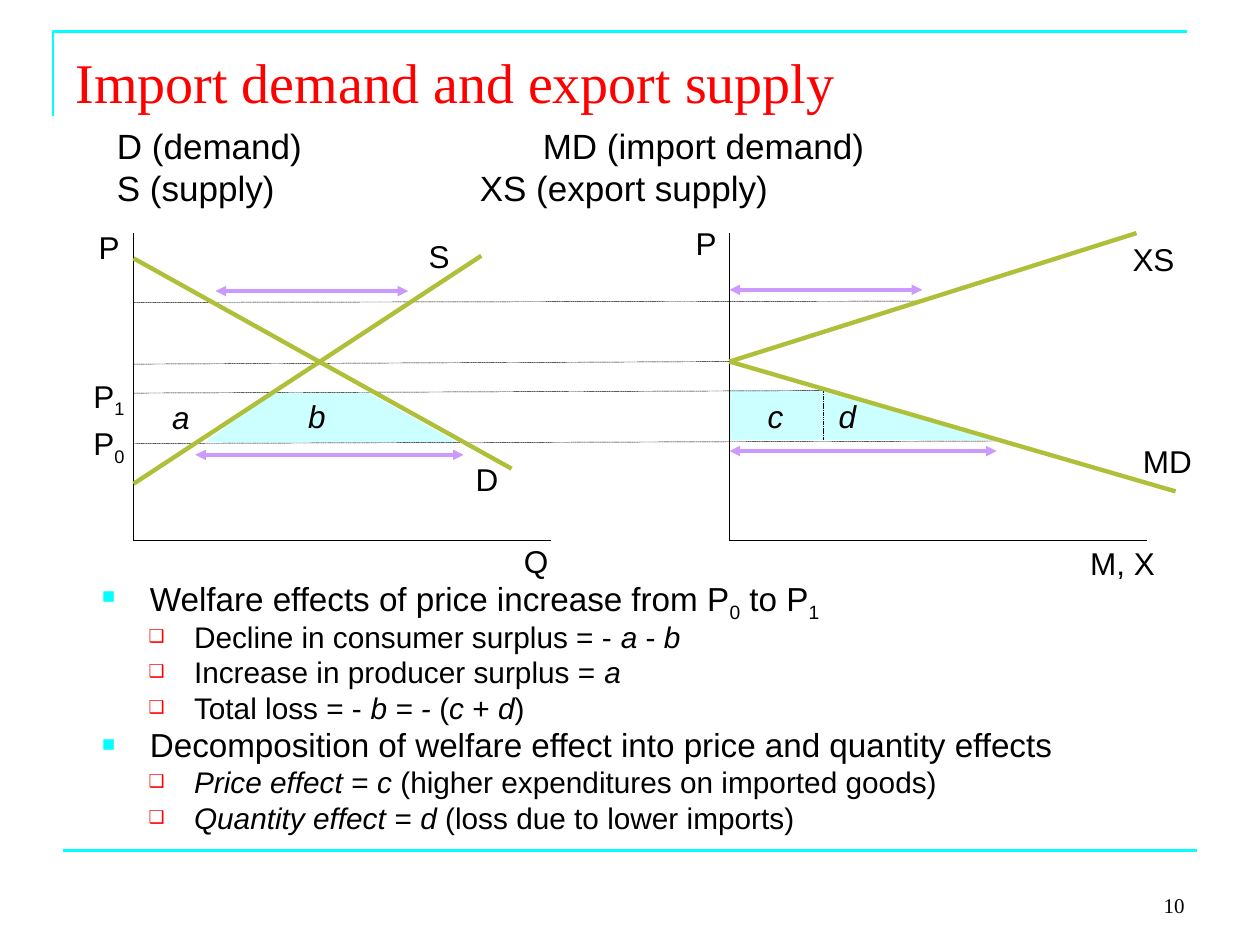
from lxml.etree import SubElement
from pptx import Presentation
from pptx.dml.color import RGBColor
from pptx.enum.dml import MSO_LINE
from pptx.enum.shapes import MSO_CONNECTOR
from pptx.enum.text import MSO_ANCHOR, MSO_AUTO_SIZE, PP_ALIGN
from pptx.oxml.ns import qn
from pptx.util import Inches, Pt

COLORS = {
    "frame": "00FFFF",
    "title": "FF0000",
    "text": "000000",
    "curve": "AFBF39",
    "trade": "CC99FF",
    "welfare": "CCFFFF",
}
COLUMNS, ROWS = 100, 75
LEFT_AXIS, RIGHT_AXIS = 10.6, 57.9
AXIS_TOP, AXIS_BOTTOM, AXIS_LENGTH = 18.5, 42.9, 33.1

# Bullet sign, colour, size in percent, text size, left margin, hanging indent
LEVELS = [
    ("■", "frame", 65, 19, 3.8, 3.8),
    ("❑", "title", 60, 17, 7.3, 3.6),
]
# Asterisks enclose italics; an underscore lowers the next character.
WELFARE_POINTS = [
    (0, "Welfare effects of price increase from P_0 to P_1"),
    (1, "Decline in consumer surplus = - *a* - *b*"),
    (1, "Increase in producer surplus = *a*"),
    (1, "Total loss = - *b = - *(*c* + *d*)"),
    (0, "Decomposition of welfare effect into price and quantity effects"),
    (1, "*Price effect *= *c *(higher expenditures on imported goods)"),
    (1, "*Quantity effect *= *d *(loss due to lower imports)"),
]
WELFARE_AREAS = [
    [(57.9, 31), (57.9, 34.9), (79.1, 34.9), (65, 31)],
    [(21.5, 31.2), (16.3, 35.1), (36.3, 35.1), (29.3, 31.2)],
]
CURVES = [
    ((LEFT_AXIS, 20.5), (40.6, 37.2)),
    ((LEFT_AXIS, 38.4), (38.2, 20.3)),
    ((RIGHT_AXIS, 28.7), (93.3, 39)),
    ((RIGHT_AXIS, 28.7), (90.2, 18.5)),
]
PRICE_LINES = [
    ((LEFT_AXIS, 24), (72.8, 23.9)),
    ((LEFT_AXIS, 28.9), (RIGHT_AXIS, 28.7)),
    ((LEFT_AXIS, 31.2), (65.7, 31)),
    ((LEFT_AXIS, 35.2), (79.1, 35)),
    ((65.3, 34.9), (65.3, 31)),
]
# Start column, end column, row
TRADE_ARROWS = [
    (15.5, 36.8, 36.1),
    (RIGHT_AXIS, 79.1, 35.8),
    (17.1, 32.4, 23.1),
    (RIGHT_AXIS, 73.2, 23),
]
# Text, left, top, width
LABELS = [
    ("MD", 89.1, 34.6, 7.1),
    ("XS", 88, 18.6, 7.1),
    ("S", 32.1, 18.3, 5.5),
    ("D", 35.9, 36, 5.5),
    ("Q", 39.8, 42.5, 5.5),
    ("P", 5.9, 17.6, 5.5),
    ("P", 53.3, 17.3, 5.5),
    ("M, X", 84.8, 42.7, 8.6),
    ("P_0", 5.9, 33.2, 5.5),
    ("P_1", 5.9, 29.4, 5.5),
    ("*a*", 11.6, 31.1, 5.5),
    ("*b*", 22.4, 31, 5.5),
    ("*c*", 58.8, 31, 5.5),
    ("*d*", 64.5, 31, 5.5),
]


class SlideBuilder:
    """Holds the slide, its grid and its text style."""

    def __init__(self, deck):
        self.slide = deck.slides.add_slide(deck.slide_layouts[1])
        self.column = deck.slide_width / COLUMNS
        self.row = deck.slide_height / ROWS

    def x(self, columns):
        return round(columns * self.column)

    def y(self, rows):
        return round(rows * self.row)

    def place(self, holder, left, top, width, height):
        holder.left, holder.top = self.x(left), self.y(top)
        holder.width, holder.height = self.x(width), self.y(height)

    def style(self, paragraph, size, color="text", font="Arial"):
        paragraph.font.size = Pt(size)
        paragraph.font.name = font
        paragraph.font.color.rgb = RGBColor.from_string(COLORS[color])

    def add_runs(self, paragraph, text):
        """Adds runs, reading *italic* and _subscript marks."""
        for index, stretch in enumerate(text.split("*")):
            plain, *lowered = stretch.split("_")
            pieces = [(plain, False)]
            for piece in lowered:
                pieces += [(piece[0], True), (piece[1:], False)]
            for words, subscript in pieces:
                if not words:
                    continue
                run = paragraph.add_run()
                run.text = words
                if index % 2:
                    run.font.italic = True
                if subscript:
                    run._r.get_or_add_rPr().set("baseline", "-25000")

    def title(self, text, *area):
        heading = self.slide.shapes.title
        self.place(heading, *area)
        heading.text_frame.vertical_anchor = MSO_ANCHOR.MIDDLE
        paragraph = heading.text_frame.paragraphs[0]
        paragraph.alignment = PP_ALIGN.LEFT
        self.add_runs(paragraph, text)
        self.style(paragraph, 32, "title", "Times New Roman")

    def indent(self, paragraph, margin, hanging):
        properties = paragraph._p.get_or_add_pPr()
        properties.set("marL", str(self.x(margin)))
        properties.set("indent", str(-self.x(hanging)))
        return properties

    def bullets(self, points, *area):
        body = self.slide.placeholders[1]
        self.place(body, *area)
        frame = body.text_frame
        frame.auto_size = MSO_AUTO_SIZE.NONE
        frame.vertical_anchor = MSO_ANCHOR.TOP
        for index, (level, text) in enumerate(points):
            paragraph = frame.add_paragraph() if index else frame.paragraphs[0]
            sign, color, percent, size, margin, hanging = LEVELS[level]
            paragraph.level = level
            paragraph.line_spacing = 0.8
            paragraph.space_before = Pt(4)
            properties = self.indent(paragraph, margin, hanging)
            bullet_color = SubElement(properties, qn("a:buClr"))
            SubElement(bullet_color, qn("a:srgbClr"), val=COLORS[color])
            SubElement(properties, qn("a:buSzPct"), val=str(percent * 1000))
            SubElement(properties, qn("a:buFont"), typeface="Arial")
            SubElement(properties, qn("a:buChar"), char=sign)
            self.add_runs(paragraph, text)
            self.style(paragraph, size)

    def text(self, lines, left, top, width, height, size=18, font="Arial",
             align=PP_ALIGN.CENTER, anchor=MSO_ANCHOR.TOP, hanging=0):
        frame = self.slide.shapes.add_textbox(
            self.x(left), self.y(top), self.x(width), self.y(height)).text_frame
        frame.word_wrap = True
        frame.vertical_anchor = anchor
        for index, line in enumerate(lines):
            paragraph = frame.add_paragraph() if index else frame.paragraphs[0]
            paragraph.alignment = align
            if hanging:
                self.indent(paragraph, hanging, hanging)
            self.add_runs(paragraph, line)
            self.style(paragraph, size, font=font)

    def line(self, start, end, color="text", width=0.75, dotted=False, arrows=False):
        connector = self.slide.shapes.add_connector(
            MSO_CONNECTOR.STRAIGHT, self.x(start[0]), self.y(start[1]),
            self.x(end[0]), self.y(end[1]))
        connector.line.color.rgb = RGBColor.from_string(COLORS[color])
        connector.line.width = Pt(width)
        if dotted:
            connector.line.dash_style = MSO_LINE.SQUARE_DOT
        if arrows:
            for tip in ("a:headEnd", "a:tailEnd"):
                SubElement(connector.line._get_or_add_ln(), qn(tip), type="triangle")
        SubElement(connector._element.spPr, qn("a:effectLst"))

    def outline(self, points, fill=None, border=None):
        """Draws a closed filled area, or an open line if only a border is given."""
        corners = [(self.x(column), self.y(row)) for column, row in points]
        builder = self.slide.shapes.build_freeform(*corners[0])
        builder.add_line_segments(corners[1:], close=fill is not None)
        shape = builder.convert_to_shape()
        shape.shadow.inherit = False
        if fill:
            shape.fill.solid()
            shape.fill.fore_color.rgb = RGBColor.from_string(COLORS[fill])
            shape.line.fill.background()
        else:
            shape.fill.background()
            shape.line.color.rgb = RGBColor.from_string(COLORS[border])
            shape.line.width = Pt(1.5)


def main():
    deck = Presentation()
    deck.slide_width, deck.slide_height = Inches(10), Inches(7.5)
    page = SlideBuilder(deck)
    page.outline([(4.2, 9.2), (4.2, 2.5), (94.2, 2.5)], border="frame")
    page.line((5, 67.5), (95, 67.5), "frame", 1.5)
    page.text(["10"], 71.7, 68.3, 23.3, 5, 12, "Times New Roman",
              PP_ALIGN.RIGHT, MSO_ANCHOR.BOTTOM)
    page.title("Import demand and export supply", 5, 3, 90, 6.9)
    for area in WELFARE_AREAS:
        page.outline(area, fill="welfare")
    for axis in (LEFT_AXIS, RIGHT_AXIS):
        origin = (axis, AXIS_BOTTOM)
        page.line((axis, AXIS_TOP), origin)
        page.line(origin, (axis + AXIS_LENGTH, AXIS_BOTTOM))
    for start, end in PRICE_LINES:
        page.line(start, end, width=0.25, dotted=True)
    for start, end in CURVES:
        page.line(start, end, "curve", 2.5)
    for left, right, row in TRADE_ARROWS:
        page.line((left, row), (right, row), "trade", 2, arrows=True)
    for label, left, top, width in LABELS:
        page.text([label], left, top, width, 4)
    page.text(["D (demand)\t\t\t\tMD (import demand)",
               "S (supply)\t\t\t\tXS (export supply)"],
              8.3, 9.4, 88.4, 7.7, 20, align=PP_ALIGN.LEFT, hanging=3.8)
    page.bullets(WELFARE_POINTS, 7.1, 45.7, 87.9, 22.1)
    deck.save("out.pptx")


if __name__ == "__main__":
    main()
